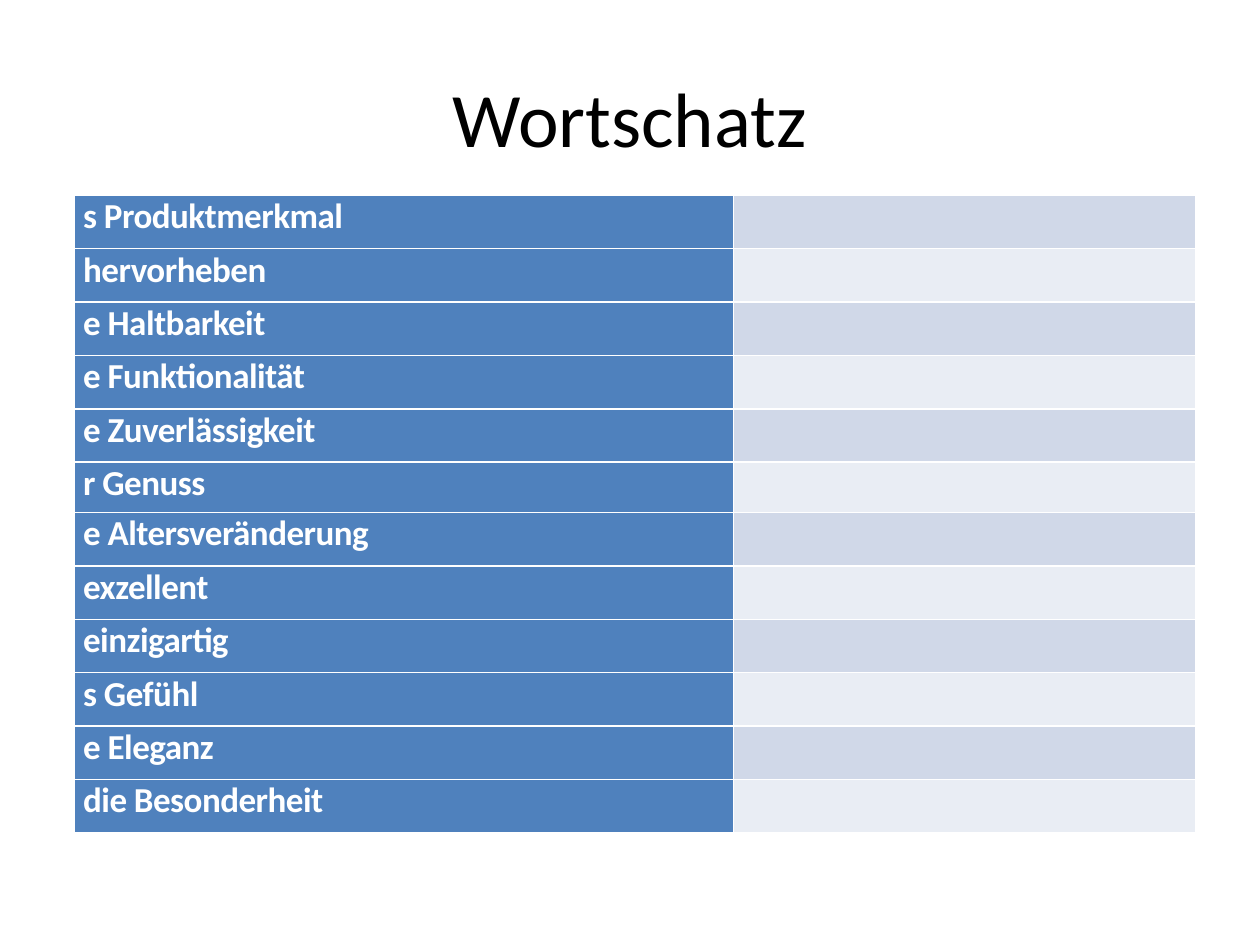
"""Build the vocabulary slide with a two-column word table."""
from dataclasses import dataclass

from lxml import etree
from pptx import Presentation
from pptx.dml.color import RGBColor
from pptx.enum.text import MSO_ANCHOR, PP_ALIGN
from pptx.oxml.ns import qn
from pptx.util import Inches, Pt

CENTER, JUSTIFY = PP_ALIGN.CENTER, PP_ALIGN.JUSTIFY
MIDDLE = MSO_ANCHOR.MIDDLE
FONT = "Calibri"
COLORS = {
    "title": "000000",
    "white": "FFFFFF",
    "word": "4F81BD",
    "band_dark": "D0D8E8",
    "band_light": "E9EDF4",
}


@dataclass
class Entry:
    word: str
    height: float = 0.424


ENTRIES = [
    Entry("s Produktmerkmal"),
    Entry("hervorheben"),
    Entry("e Haltbarkeit"),
    Entry("e Funktionalität"),
    Entry("e Zuverlässigkeit"),
    Entry("r Genuss", 0.4),
    Entry("e Altersveränderung"),
    Entry("exzellent"),
    Entry("einzigartig"),
    Entry("s Gefühl"),
    Entry("e Eleganz"),
    Entry("die Besonderheit"),
]
COLUMN_WIDTHS = (5.23, 3.67)


def style_font(font, size: float, color: str, bold: bool = False) -> None:
    font.name, font.size, font.bold = FONT, Pt(size), bold
    font.color.rgb = RGBColor.from_string(COLORS[color])


def add_title(slide, text: str) -> None:
    sp = slide.shapes.add_textbox(Inches(0.5), Inches(0.3), Inches(9), Inches(1.25))
    tf = sp.text_frame
    tf.word_wrap = True
    tf.vertical_anchor = MIDDLE
    tf.text = text
    p = tf.paragraphs[0]
    p.alignment = CENTER
    style_font(p.runs[0].font, 44, "title")


def style_cell(cell, fill: str) -> None:
    tc_pr = cell._tc.get_or_add_tcPr()
    for side in ("a:lnL", "a:lnR", "a:lnT", "a:lnB"):
        ln = etree.SubElement(tc_pr, qn(side), w=str(Pt(1)))
        solid = etree.SubElement(ln, qn("a:solidFill"))
        etree.SubElement(solid, qn("a:srgbClr"), val=COLORS["white"])
    cell.fill.solid()
    cell.fill.fore_color.rgb = RGBColor.from_string(COLORS[fill])
    cell.margin_left = cell.margin_right = Inches(0.07)
    cell.margin_top = cell.margin_bottom = 0


def fill_word(cell, word: str) -> None:
    cell.text = word
    p = cell.text_frame.paragraphs[0]
    p.alignment = JUSTIFY
    r = p.runs[0]
    style_font(r.font, 20, "white", bold=True)
    r.font._element.set("spc", "-30")


def add_word_table(slide, entries: list[Entry]) -> None:
    height = sum(entry.height for entry in entries)
    frame = slide.shapes.add_table(
        len(entries), len(COLUMN_WIDTHS), Inches(0.59), Inches(1.55),
        Inches(sum(COLUMN_WIDTHS)), Inches(height))
    table = frame.table
    for column, width in zip(table.columns, COLUMN_WIDTHS):
        column.width = Inches(width)
    for i, entry in enumerate(entries):
        table.rows[i].height = Inches(entry.height)
        word_cell, blank_cell = table.cell(i, 0), table.cell(i, 1)
        style_cell(word_cell, "word")
        style_cell(blank_cell, "band_light" if i % 2 else "band_dark")
        fill_word(word_cell, entry.word)


def main() -> None:
    prs = Presentation()
    prs.slide_width, prs.slide_height = Inches(10), Inches(7.5)
    slide = prs.slides.add_slide(prs.slide_layouts[6])
    add_title(slide, "Wortschatz")
    add_word_table(slide, ENTRIES)
    prs.save("out.pptx")


if __name__ == "__main__":
    main()
